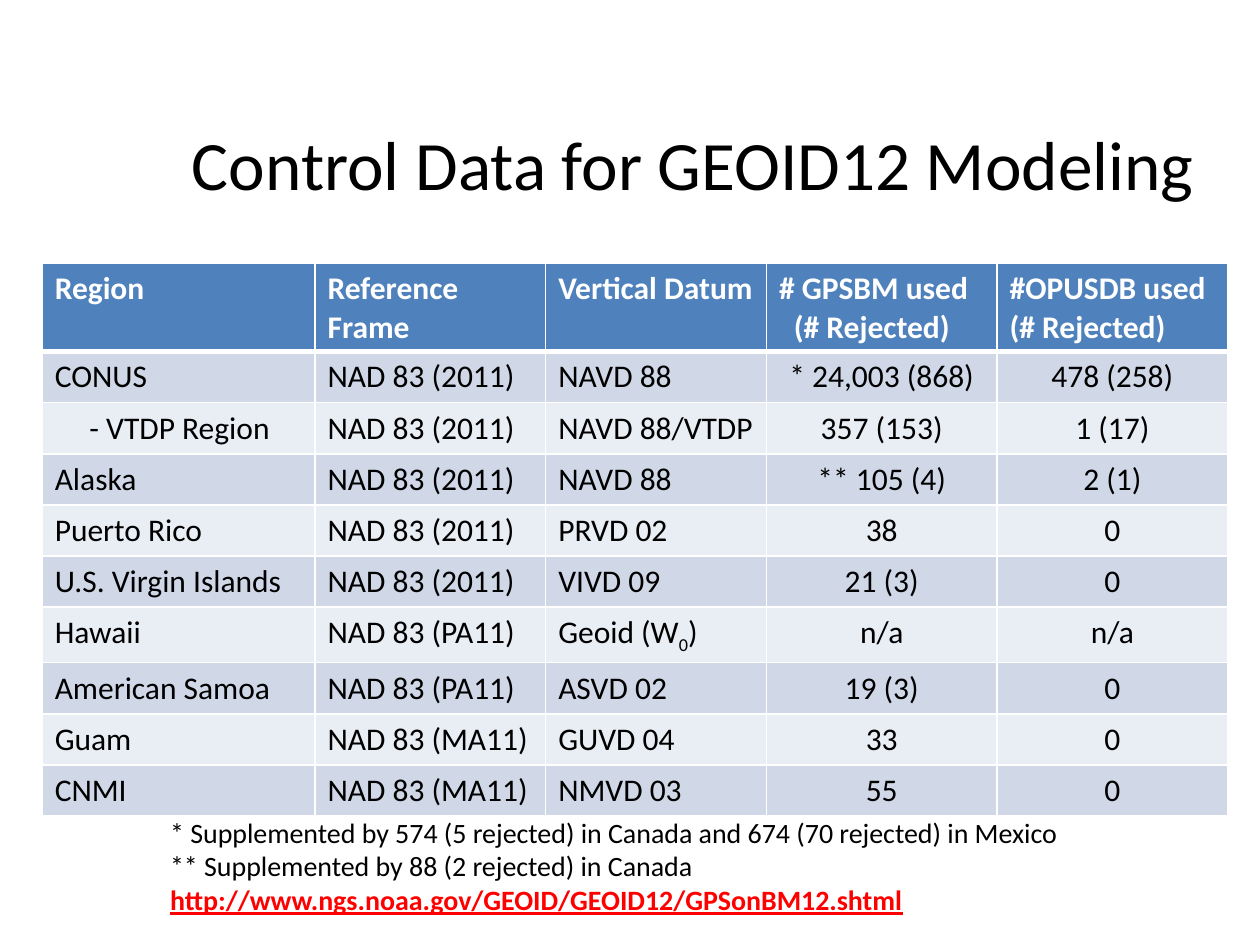
from lxml import etree
from pptx import Presentation
from pptx.dml.color import RGBColor
from pptx.enum.text import MSO_ANCHOR, MSO_AUTO_SIZE, PP_ALIGN
from pptx.oxml.ns import qn
from pptx.util import Cm, Pt

LEFT, CENTER = PP_ALIGN.LEFT, PP_ALIGN.CENTER
TOP, MIDDLE = MSO_ANCHOR.TOP, MSO_ANCHOR.MIDDLE
GROW = MSO_AUTO_SIZE.SHAPE_TO_FIT_TEXT

WHITE = RGBColor(0xFF, 0xFF, 0xFF)
BLACK = RGBColor(0, 0, 0)
RED = RGBColor(0xFF, 0, 0)
BLUE = RGBColor(0x4F, 0x81, 0xBD)
BANDS = (RGBColor(0xD0, 0xD8, 0xE8), RGBColor(0xE9, 0xED, 0xF4))

# Column widths and row height in cm
WIDTHS = (5.5, 4.65, 4.45, 4.65, 4.65)
HEIGHT = 1.03

# A newline starts a paragraph; underscores enclose a subscript
HEADS = ("Region", "Reference\nFrame", "Vertical Datum",
         "# GPSBM used\n(# Rejected)", "#OPUSDB used\n(# Rejected)")
ROWS = (
    ("CONUS", "2011", "NAVD 88", "* 24,003 (868)", "478 (258)"),
    ("- VTDP Region", "2011", "NAVD 88/VTDP", "357 (153)", "1 (17)"),
    ("Alaska", "2011", "NAVD 88", "** 105 (4)", "2 (1)"),
    ("Puerto Rico", "2011", "PRVD 02", "38", "0"),
    ("U.S. Virgin Islands", "2011", "VIVD 09", "21 (3)", "0"),
    ("Hawaii", "PA11", "Geoid (W_0_)", "n/a", "n/a"),
    ("American Samoa", "PA11", "ASVD 02", "19 (3)", "0"),
    ("Guam", "MA11", "GUVD 04", "33", "0"),
    ("CNMI", "MA11", "NMVD 03", "55", "0"),
)
# Left indents in cm, by row, column and paragraph
INDENTS = {(0, 3, 1): 0.3, (2, 0, 0): 0.7}

NOTES = (
    ("* Supplemented by 574 (5 rejected) in Canada "
     "and 674 (70 rejected) in Mexico", {}),
    ("** Supplemented by 88 (2 rejected) in Canada", {}),
    ("http://www.ngs.noaa.gov/GEOID/GEOID12/GPSonBM12.shtml",
     {"color": RED, "bold": True, "underline": True}),
)


class Deck:
    """Holds the text style and the current slide."""

    def __init__(self, slide):
        self.slide = slide
        self.style = {"name": "Calibri", "color": BLACK}

    def line(self, para, text, align=LEFT, indent=0, **form):
        para.alignment = align
        if indent:
            para._p.get_or_add_pPr().set("marL", str(Cm(indent)))
        for i, part in enumerate(text.split("_")):
            run = para.add_run()
            run.text = part
            for key, value in {**self.style, **form}.items():
                if key == "color":
                    run.font.color.rgb = value
                else:
                    setattr(run.font, key, value)
            if i % 2:
                run._r.get_or_add_rPr().set("baseline", "-25000")

    def text(self, place, lines, wrap=True, anchor=TOP, **form):
        box = self.slide.shapes.add_textbox(*map(Cm, place))
        frame = box.text_frame
        frame.word_wrap = wrap
        frame.vertical_anchor = anchor
        if not wrap:
            frame.auto_size = GROW
        for i, (text, extra) in enumerate(lines):
            para = frame.add_paragraph() if i else frame.paragraphs[0]
            self.line(para, text, **{**form, **extra})

    def edge(self, cell, side, width):
        rule = etree.SubElement(cell._tc.get_or_add_tcPr(),
                                qn(f"a:ln{side}"), w=str(Pt(width)))
        fill = etree.SubElement(rule, qn("a:solidFill"))
        etree.SubElement(fill, qn("a:srgbClr"), val=str(WHITE))

    def table(self, left, top, rows):
        frame = self.slide.shapes.add_table(
            len(rows), len(WIDTHS), Cm(left), Cm(top),
            Cm(sum(WIDTHS)), Cm(HEIGHT * len(rows)))
        grid = frame.table
        for col, width in zip(grid.columns, WIDTHS):
            col.width = Cm(width)
        for r, row in enumerate(rows):
            grid.rows[r].height = Cm(HEIGHT)
            for c, text in enumerate(row):
                self.cell(grid.cell(r, c), r, c, text)

    def cell(self, cell, r, c, text):
        # Borders, with a heavy rule below the header
        for side in "LRTB":
            heavy = (r, side) in ((0, "B"), (1, "T"))
            self.edge(cell, side, 3 if heavy else 1)
        cell.fill.solid()
        cell.fill.fore_color.rgb = BANDS[(r - 1) % 2] if r else BLUE
        # Text
        frame = cell.text_frame
        for i, part in enumerate(text.split("\n")):
            para = frame.add_paragraph() if i else frame.paragraphs[0]
            self.line(para, part, align=CENTER if r and c > 2 else LEFT,
                      indent=INDENTS.get((r, c, i), 0), size=Pt(18),
                      bold=r == 0, color=BLACK if r else WHITE)


def main():
    show = Presentation()
    show.slide_width, show.slide_height = Cm(25.4), Cm(19.05)
    deck = Deck(show.slides.add_slide(show.slide_layouts[6]))

    # Title
    deck.text((2.54, 1.7, 22.86, 3.18),
              [("Control Data for GEOID12 Modeling", {})],
              anchor=MIDDLE, align=CENTER, size=Pt(39.6))

    # Control data by region
    body = [(area, f"NAD 83 ({frame})", *rest) for area, frame, *rest in ROWS]
    deck.table(0.85, 5.31, [HEADS, *body])

    # Footnotes
    deck.text((3.18, 16.31, 18.64, 2.31), NOTES, wrap=False, size=Pt(16))

    show.save("out.pptx")


if __name__ == "__main__":
    main()
